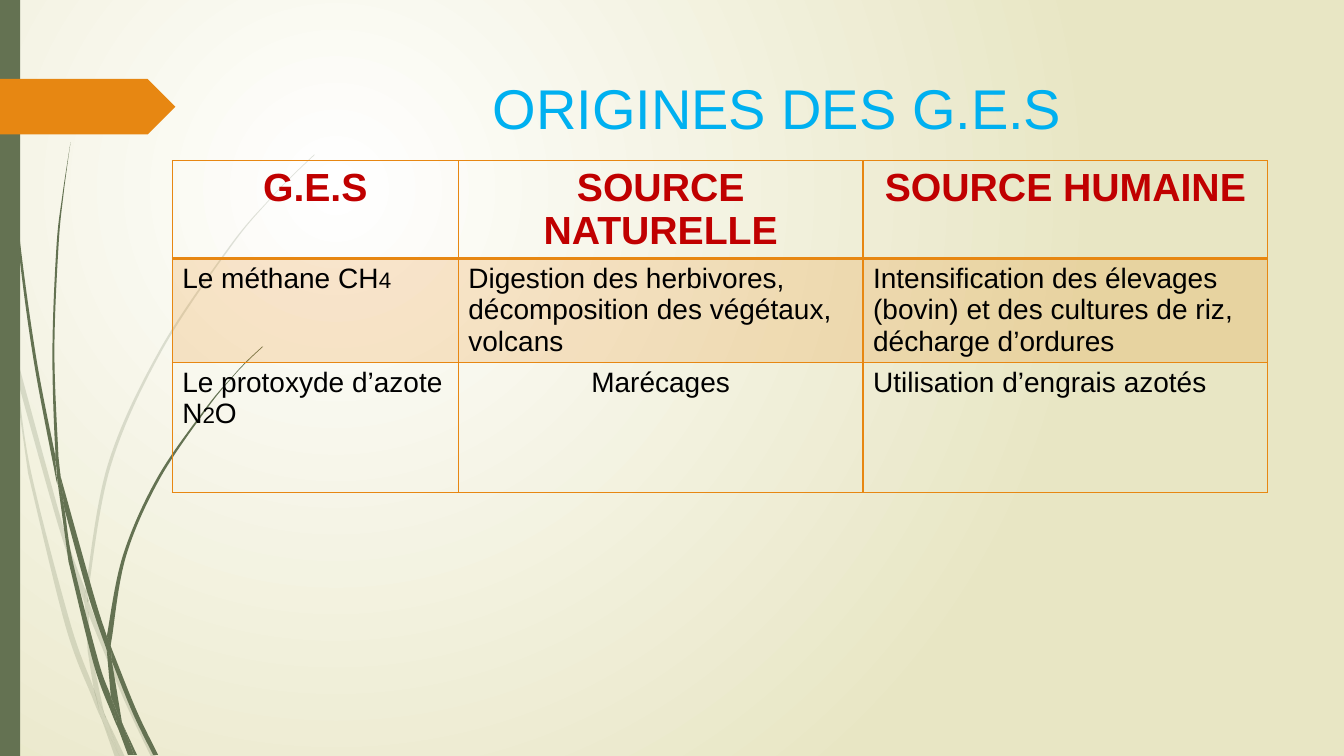
from lxml import etree
from pptx import Presentation
from pptx import util as u
from pptx.dml import color as dml
from pptx.enum import shapes, text
from pptx.oxml import ns

Cm = u.Cm
GREEN, ORANGE, RED, BLUE, BLACK = "647252", "E78712", "C00000", "00B0F0", "000000"
PAGE_WIDTH, PAGE_HEIGHT = 33.87, 19.05
CM_PER_UNIT = 2.54

PALE_LEAVES = [
    ([(0, 2.82), (0.09, 3.22), (0.11, 3.5)], [(0.1, 3.44), (0, 2.99)]),
    ([(0.14, 3.45), (0.62, 5.2), (0.85, 5.86)], [(0.84, 5.99), (0.58, 5.22), (0.17, 3.76)]),
    ([(0.88, 5.96), (0.92, 6.07), (1.27, 6.92), (1.55, 7.51)],
     [(1.5, 7.51), (1.23, 6.94), (0.88, 6.1)]),
    ([(1.05, 7.11), (1.24, 7.51)], [(1.19, 7.51)]),
    ([(0.11, 3.5), (0.17, 3.76), (0.31, 4.69), (0.7, 6.19), (0.93, 6.83), (0.99, 7.07)],
     [(1.01, 7.14), (0.92, 6.93), (0.65, 6.21), (0.28, 4.7)]),
    ([(0.84, 5.99), (0.88, 6.08), (0.88, 6.1), (0.91, 6.46), (1.03, 7.06), (1.05, 7.11)],
     [(0.96, 6.92), (0.93, 6.83), (0.87, 6.46)]),
    ([(3.12, 1.53), (2.89, 1.75), (2.68, 1.97), (2.28, 2.44), (1.58, 3.48), (1.07, 4.61),
      (0.85, 5.84), (0.85, 5.86)],
     [(0.88, 5.96), (0.88, 5.84), (1.1, 4.62), (1.6, 3.49), (2.29, 2.45), (2.68, 1.98),
      (2.9, 1.75), (3.12, 1.54)]),
    ([(1.01, 7.14), (1.19, 7.51)], [(1.14, 7.51)]),
    ([(0.85, 5.86), (0.88, 5.96)], [(0.88, 6.1), (0.88, 6.08), (0.84, 5.99)]),
    ([(0.93, 6.83), (0.96, 6.92), (1.05, 7.11), (1.19, 7.51)], [(1.01, 7.14), (0.99, 7.07)]),
]
DARK_LEAVES = [
    ([(0.04, 0), (0.05, 0.48), (0.08, 1.09), (0.19, 2.32), (0.36, 3.55), (0.55, 4.53),
      (0.55, 4.57), (0.57, 4.81)],
     [(0.56, 4.77), (0.33, 3.55), (0.17, 2.33), (0.07, 1.1), (0.04, 0.48), (0.03, 0)]),
    ([(0.6, 4.72), (0.93, 5.9), (1.06, 6.31), (1.06, 6.33)],
     [(1.06, 6.45), (0.88, 5.92), (0.64, 5.05)]),
    ([(1.1, 6.41), (1.13, 6.49), (1.36, 7.06), (1.57, 7.49)],
     [(1.52, 7.49), (1.32, 7.08), (1.11, 6.56)]),
    ([(0.57, 4.77), (0.64, 5.05), (0.72, 5.56), (0.98, 6.57), (1.1, 6.91), (1.16, 7.17)],
     [(1.17, 7.22), (1.11, 7.08), (0.93, 6.59), (0.68, 5.57)]),
    ([(0.7, 1.41), (0.62, 1.93), (0.56, 2.45), (0.52, 3.49), (0.55, 4.49), (0.6, 4.72)],
     [(0.58, 4.53), (0.54, 3.49), (0.58, 2.45), (0.63, 1.93), (0.7, 1.41)]),
    ([(1.22, 7.19), (1.36, 7.49)], [(1.33, 7.49)]),
    ([(0.55, 4.49), (0.6, 4.72), (0.64, 5.05)], [(0.57, 4.77), (0.55, 4.53)]),
    ([(2.6, 3.44), (2.45, 3.58), (2.31, 3.73), (2.04, 4.05), (1.56, 4.74), (1.22, 5.51),
      (1.06, 6.31)],
     [(1.1, 6.41), (1.11, 6.33), (1.25, 5.52), (1.58, 4.76), (2.05, 4.06), (2.31, 3.74),
      (2.45, 3.59), (2.61, 3.44)]),
    ([(1.17, 7.22), (1.31, 7.49)], [(1.27, 7.49)]),
    ([(1.06, 6.45), (1.09, 6.51), (1.11, 6.56), (1.21, 7.16), (1.22, 7.19)],
     [(1.16, 7.06), (1.1, 6.91)]),
    ([(1.06, 6.31), (1.1, 6.41), (1.11, 6.56)], [(1.09, 6.51), (1.06, 6.45), (1.06, 6.33)]),
    ([(1.1, 6.91), (1.16, 7.06), (1.22, 7.19), (1.33, 7.49)],
     [(1.3, 7.49), (1.17, 7.22), (1.16, 7.17)]),
]

HEADERS = ["G.E.S", "SOURCE NATURELLE", "SOURCE HUMAINE"]
GASES = [
    [[("Le méthane CH", 20), ("4", 16)],
     [("Digestion des herbivores, décomposition des végétaux, volcans", 20)],
     [("Intensification des élevages (bovin) et des cultures de riz, décharge d’ordures", 20)]],
    [[("Le protoxyde d’azote N", 20), ("2", 16), ("O", 20)],
     [("Marécages", 20)],
     [("Utilisation d’engrais azotés", 20)]],
]


def rgb(value):
    return dml.RGBColor.from_string(value)


def paint(fill, owner, color, alpha=100):
    fill.solid()
    fill.fore_color.rgb = rgb(color)
    if alpha < 100:
        swatch = owner.find(".//" + ns.qn("a:solidFill") + "/" + ns.qn("a:srgbClr"))
        etree.SubElement(swatch, ns.qn("a:alpha"), val=str(alpha * 1000))


def plain(shape, color, alpha=100):
    shape.shadow.inherit = False
    shape.line.fill.background()
    paint(shape.fill, shape.element.spPr, color, alpha)


def write(para, words, size, color, bold=False):
    span = para.add_run()
    span.text = words
    span.font.name = "Arial"
    span.font.size = u.Pt(size)
    span.font.bold = bold
    span.font.color.rgb = rgb(color)


def background(page):
    fill = page.background.fill
    fill.gradient()
    for stop, position, color in zip(fill.gradient_stops, (0, 1), ("FFFFFF", "E8E6C4")):
        stop.position = position
        stop.color.rgb = rgb(color)
    gradient = page.element.find(".//" + ns.qn("a:gradFill"))
    gradient.remove(gradient.find(ns.qn("a:lin")))
    circle = etree.SubElement(gradient, ns.qn("a:path"), {"path": "circle"})
    etree.SubElement(circle, ns.qn("a:fillToRect"), l="50000", t="50000", r="100000", b="100000")


def bend(segments, points):
    padded = [points[0], *points, points[-1]]
    for segment, before, start, end, after in zip(
            segments, padded, padded[1:], padded[2:], padded[3:]):
        segment.tag = ns.qn("a:cubicBezTo")
        first = [round(s + (e - b) / 6) for b, s, e in zip(before, start, end)]
        second = [round(e - (a - s) / 6) for s, e, a in zip(start, end, after)]
        for index, (x, y) in enumerate((first, second)):
            segment.insert(index, etree.Element(ns.qn("a:pt"), x=str(x), y=str(y)))


def leaf(page, left, top, sides, alpha):
    outline = [(Cm(left + x * CM_PER_UNIT), Cm(top + y * CM_PER_UNIT))
               for side in sides for x, y in side]
    builder = page.shapes.build_freeform(*outline[0])
    builder.add_line_segments(outline[1:], close=True)
    shape = builder.convert_to_shape()
    points = [(int(point.get("x")), int(point.get("y")))
              for point in shape.element.iter(ns.qn("a:pt"))]
    segments = shape.element.findall(".//" + ns.qn("a:lnTo"))
    turn = len(sides[0])
    bend(segments[:turn - 1], points[:turn])
    bend(segments[turn:], points[turn:])
    plain(shape, GREEN, alpha)


def decoration(page, left, top, height):
    for leaves, alpha in ((PALE_LEAVES, 20), (DARK_LEAVES, 100)):
        for sides in leaves:
            leaf(page, left, top, sides, alpha)
    bar = page.shapes.add_shape(
        shapes.MSO_SHAPE.RECTANGLE, Cm(left), Cm(top), Cm(0.51), Cm(height))
    plain(bar, GREEN)
    arrow = page.shapes.add_shape(
        shapes.MSO_SHAPE.PENTAGON, Cm(left), Cm(top + 1.99), Cm(4.42), Cm(1.4))
    plain(arrow, ORANGE)


def heading(page, left, top, width, height):
    title = page.shapes.title
    title.left, title.top, title.width, title.height = map(Cm, (left, top, width, height))
    frame = title.text_frame
    frame.word_wrap = True
    frame.vertical_anchor = text.MSO_ANCHOR.TOP
    para = frame.paragraphs[0]
    para.alignment = text.PP_ALIGN.CENTER
    write(para, "ORIGINES DES G.E.S", 40, BLUE)


def border(cell, widths):
    properties = cell._tc.get_or_add_tcPr()
    for index, (side, points) in enumerate(zip("LRTB", widths)):
        line = etree.Element(ns.qn("a:ln" + side), w=str(u.Pt(points)))
        solid = etree.SubElement(line, ns.qn("a:solidFill"))
        etree.SubElement(solid, ns.qn("a:srgbClr"), val=ORANGE)
        properties.insert(index, line)


def sources(page, left, top, widths, heights):
    table = page.shapes.add_table(
        len(heights), len(widths), Cm(left), Cm(top), Cm(sum(widths)), Cm(sum(heights))).table
    for column, width in zip(table.columns, widths):
        column.width = Cm(width)
    for row, height in zip(table.rows, heights):
        row.height = Cm(height)
    for r, row in enumerate([[[(words, 28)] for words in HEADERS], *GASES]):
        for c, spans in enumerate(row):
            cell = table.cell(r, c)
            if r == 1:
                paint(cell.fill, cell._tc.get_or_add_tcPr(), ORANGE, 20)
            else:
                cell.fill.background()
            border(cell, (1, 1, 2 if r == 1 else 1, 2 if r == 0 else 1))
            para = cell.text_frame.paragraphs[0]
            centered = r == 0 or (r, c) == (2, 1)
            para.alignment = text.PP_ALIGN.CENTER if centered else text.PP_ALIGN.LEFT
            for words, size in spans:
                write(para, words, size, BLACK if r else RED, bold=r == 0)


def main():
    deck = Presentation()
    deck.slide_width, deck.slide_height = Cm(PAGE_WIDTH), Cm(PAGE_HEIGHT)
    page = deck.slides.add_slide(deck.slide_layouts[5])
    background(page)
    decoration(page, 0, 0, PAGE_HEIGHT)
    heading(page, 7.2, 1.73, 24.77, 3.56)
    sources(page, 4.34, 4.05, (7.21, 10.2, 10.2), (2.46, 2.62, 3.28))
    deck.save("out.pptx")


if __name__ == "__main__":
    main()
